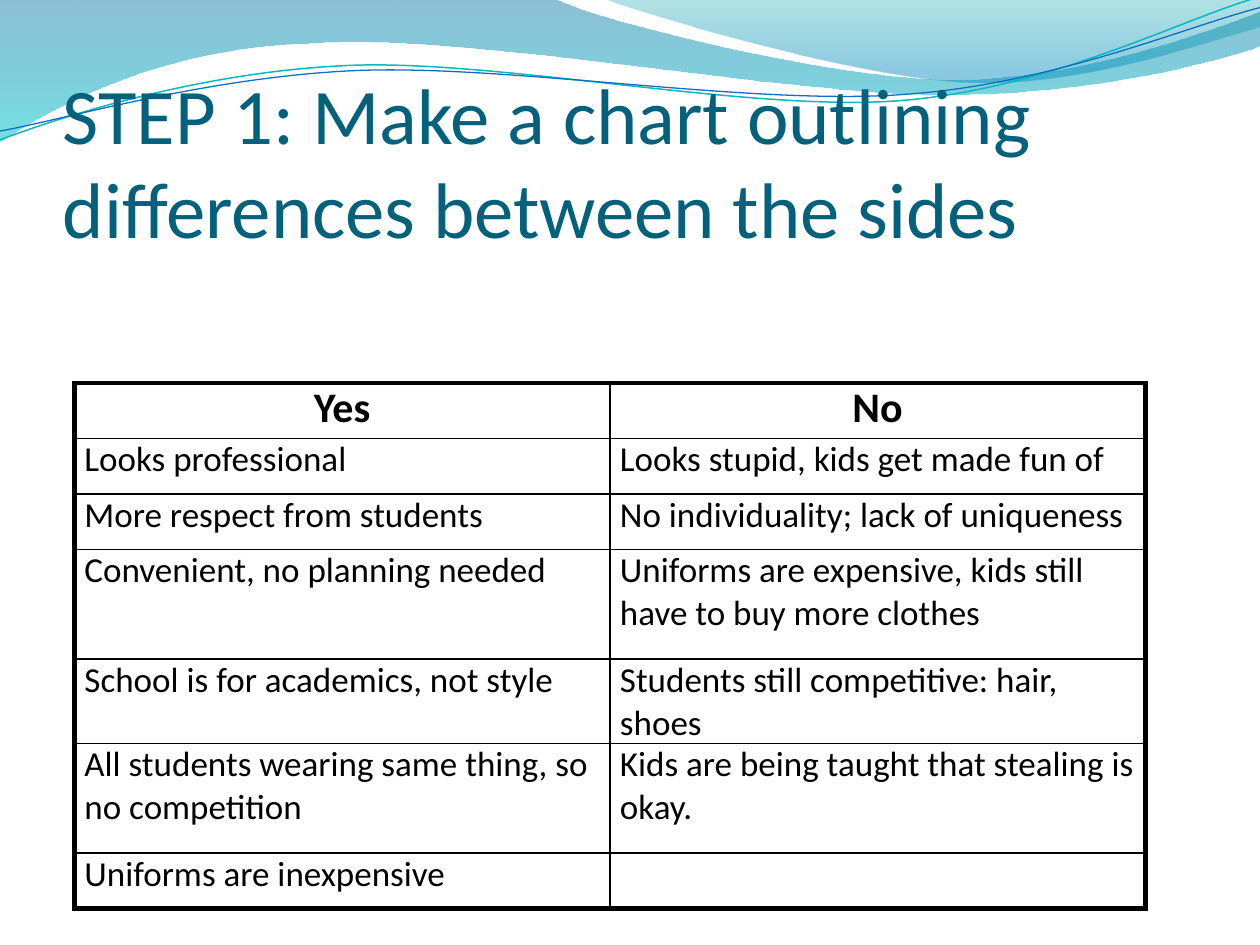
import math

from lxml import etree
from pptx import Presentation
from pptx.dml.color import RGBColor
from pptx.enum.text import MSO_ANCHOR, PP_ALIGN
from pptx.oxml.ns import qn
from pptx.util import Inches, Pt

BOTTOM = MSO_ANCHOR.BOTTOM
LEFT, CENTER = PP_ALIGN.LEFT, PP_ALIGN.CENTER
FONT = "Calibri"
COLORS = {
    "title": "04617B", "text": "000000", "border": "000000",
    "wave_top": "0074A1", "wave_bottom": "00C6CF",
    "crest_top": "00A1A9", "crest_bottom": "008BBF",
    "teal_line": "0AB8BF", "blue_line": "0F6FC6",
}
LINE_ROTATION = 357.3

# Each outline is a list of slide positions; a six-number entry is a Bezier curve.
WAVE = [(0, 0), (4.4, -0.01), (4.76, 0.17, 6.64, 0.63, 7.58, 0.63),
        (8.53, 0.63, 9.58, 0.26, 10, 0.09), (10.01, 0.36),
        (9.83, 0.44, 8.7, 0.76, 7.46, 0.75), (6.22, 0.75, 3.82, 0.28, 2.57, 0.34),
        (1.29, 0.36, 0.46, 0.83, -0.01, 1.13), (0, 0)]
CREST = [(4.79, -0.01), (5.09, 0.11, 6.82, 0.62, 7.69, 0.65),
         (8.56, 0.69, 9.61, 0.32, 10, 0.21), (10, 0), (4.79, -0.01)]
TEAL_LINE = [(0, 1.11), (0.48, 0.93, 1.58, 0.57, 2.77, 0.52),
             (3.95, 0.47, 5.93, 0.89, 7.13, 0.8), (8.33, 0.71, 9.38, 0.15, 9.98, -0.02)]
BLUE_LINE = [(0, 1.04), (0.47, 0.96, 1.64, 0.61, 2.83, 0.56),
             (4.03, 0.51, 5.97, 0.84, 7.17, 0.75), (8.36, 0.67, 9.41, 0.21, 10, 0.06)]

ROWS = [
    ("Yes", "No"),
    ("Looks professional", "Looks stupid, kids get made fun of"),
    ("More respect from students", "No individuality; lack of uniqueness"),
    ("Convenient, no planning needed",
     "Uniforms are expensive, kids still have to buy more clothes"),
    ("School is for academics, not style", "Students still competitive: hair, shoes"),
    ("All students wearing same thing, so no competition",
     "Kids are being taught that stealing is okay."),
    ("Uniforms are inexpensive", ""),
]
ROW_HEIGHTS = [0.44, 0.44, 0.44, 0.87, 0.67, 0.87, 0.44]


def color(name):
    return RGBColor.from_string(COLORS[name])


def inches(*lengths):
    return tuple(Inches(length) for length in lengths)


def add_outline(slide, box, outline, rotation=0):
    """Add a freeform filling box, with its points turned back by rotation."""
    left, top, width, height = box
    builder = slide.shapes.build_freeform(left, top)
    builder.add_line_segments([(left + width, top + height)], close=False)
    shape = builder.convert_to_shape()
    shape.shadow.inherit = False
    shape.rotation = rotation

    angle = math.radians(-rotation)
    cosine, sine = math.cos(angle), math.sin(angle)
    track = next(shape._element.spPr.iter(qn("a:path")))
    for command in list(track):
        track.remove(command)
    for index, entry in enumerate(outline):
        tag = "moveTo" if index == 0 else "lnTo" if len(entry) == 2 else "cubicBezTo"
        command = etree.SubElement(track, qn(f"a:{tag}"))
        for x, y in zip(entry[::2], entry[1::2]):
            across = Inches(x) - left - width / 2
            down = Inches(y) - top - height / 2
            etree.SubElement(command, qn("a:pt"),
                             x=str(round(across * cosine - down * sine + width / 2)),
                             y=str(round(across * sine + down * cosine + height / 2)))
    if outline[0] == outline[-1]:
        etree.SubElement(track, qn("a:close"))
    return shape


def add_gradient_shape(slide, box, outline, stops):
    """Add a filled outline; stops are (position, colour name, opacity percent)."""
    shape = add_outline(slide, box, outline)
    shape.line.fill.background()
    shape.fill.gradient()
    shape.fill.gradient_angle = 270
    for stop, (position, name, _) in zip(shape.fill.gradient_stops, stops):
        stop.position = position
        stop.color.rgb = color(name)
    elements = shape._element.spPr.iter(qn("a:srgbClr"))
    for element, (_, _, opacity) in zip(elements, stops):
        etree.SubElement(element, qn("a:alpha"), val=str(opacity * 1000))


def add_curved_line(slide, box, outline, name, width):
    shape = add_outline(slide, box, outline, LINE_ROTATION)
    shape.fill.background()
    shape.line.color.rgb = color(name)
    shape.line.width = Pt(width)


def add_wave_header(slide):
    add_gradient_shape(slide, inches(-0.01, -0.01, 10.02, 1.14), WAVE,
                       [(0, "wave_top", 45), (1, "wave_bottom", 55)])
    add_gradient_shape(slide, inches(4.79, -0.01, 5.21, 0.7), CREST,
                       [(0, "crest_top", 30), (0.8, "crest_bottom", 45)])
    add_curved_line(slide, inches(-0.02, 0.22, 10.02, 0.71), TEAL_LINE, "teal_line", 0.85)
    add_curved_line(slide, inches(-0.02, 0.3, 10.03, 0.58), BLUE_LINE, "blue_line", 0.75)


def write(para, text, size, name, bold=False, align=LEFT):
    para.text = text
    para.alignment = align
    para.font.size = Pt(size)
    for span in para.runs:
        span.font.name = FONT
        span.font.size = Pt(size)
        span.font.bold = bold
        span.font.color.rgb = color(name)


def add_title(slide, box, text):
    frame = slide.shapes.add_textbox(*box).text_frame
    frame.word_wrap = True
    frame.vertical_anchor = BOTTOM
    frame.margin_left = frame.margin_right = frame.margin_bottom = 0
    frame.margin_top = Inches(0.05)
    write(frame.paragraphs[0], text, 45, "title")


def set_borders(cell, widths):
    """Draw the cell's borders; widths maps L, R, T and B to points."""
    properties = cell._tc.get_or_add_tcPr()
    for side in "LRTB":
        line = etree.SubElement(properties, qn(f"a:ln{side}"), w=str(Pt(widths[side])))
        fill = etree.SubElement(line, qn("a:solidFill"))
        etree.SubElement(fill, qn("a:srgbClr"), val=COLORS["border"])


def add_comparison_table(slide, box):
    last_row, last_column = len(ROWS) - 1, len(ROWS[0]) - 1
    table = slide.shapes.add_table(len(ROWS), len(ROWS[0]), *box).table
    table.first_row = table.horz_banding = False
    for column in table.columns:
        column.width = box[2] // len(ROWS[0])
    for r, (texts, height) in enumerate(zip(ROWS, ROW_HEIGHTS)):
        table.rows[r].height = Inches(height)
        header = r == 0
        for c, text in enumerate(texts):
            cell = table.cell(r, c)
            cell.margin_left = cell.margin_right = Inches(0.08)
            cell.margin_top = cell.margin_bottom = 0
            set_borders(cell, {"L": 3 if c == 0 else 1, "R": 3 if c == last_column else 1,
                               "T": 3 if header else 1, "B": 3 if r == last_row else 1})
            cell.fill.background()
            write(cell.text_frame.paragraphs[0], text, 24 if header else 20, "text",
                  header, CENTER if header else LEFT)


def main():
    deck = Presentation()
    deck.slide_width, deck.slide_height = Inches(10), Inches(7.5)
    slide = deck.slides.add_slide(deck.slide_layouts[6])
    add_wave_header(slide)
    add_title(slide, inches(0.5, 0.77, 9, 1.25),
              "STEP 1: Make a chart outlining differences between the sides")
    add_comparison_table(slide, inches(0.59, 3.04, 8.5, 4.17))
    deck.save("out.pptx")


if __name__ == "__main__":
    main()
